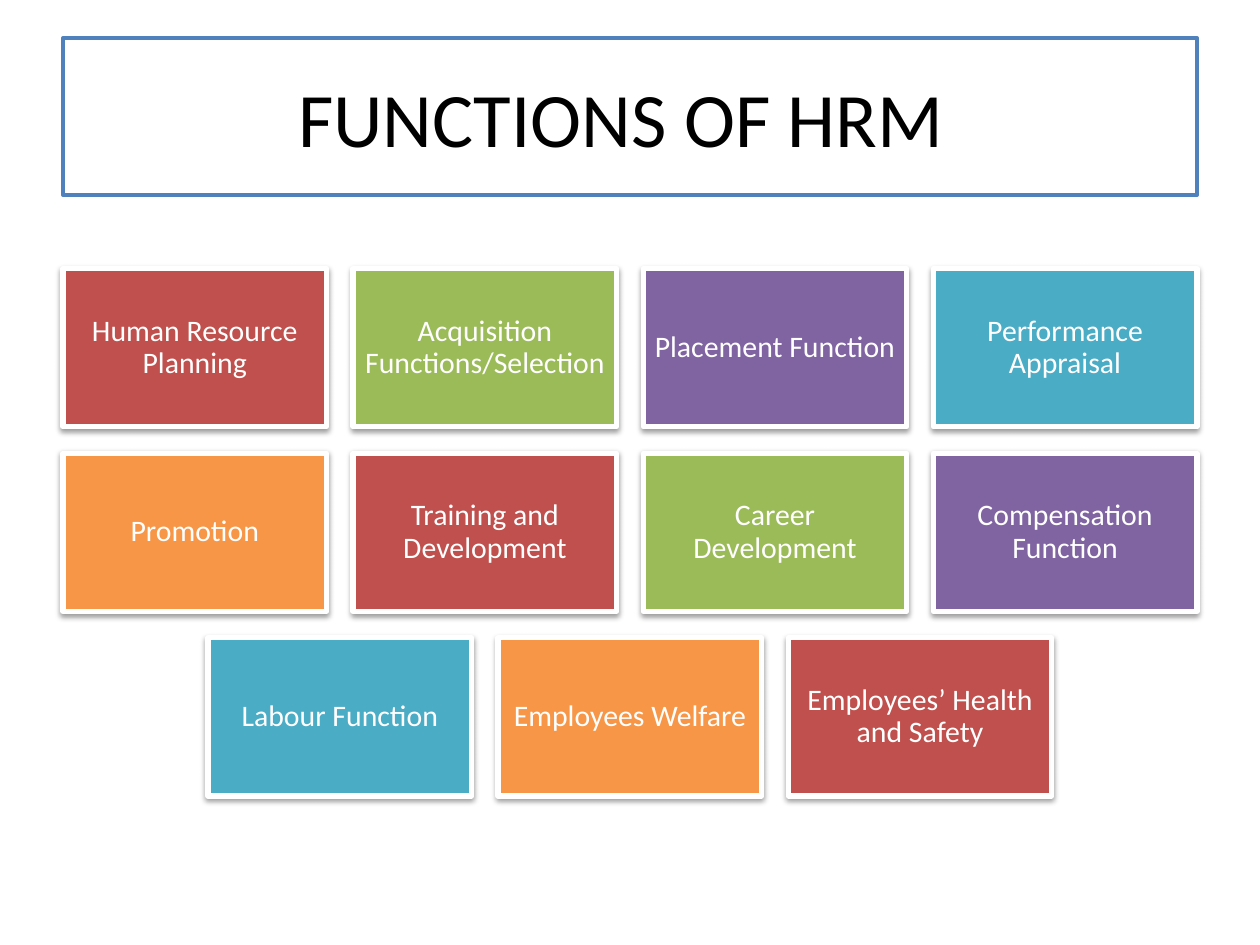
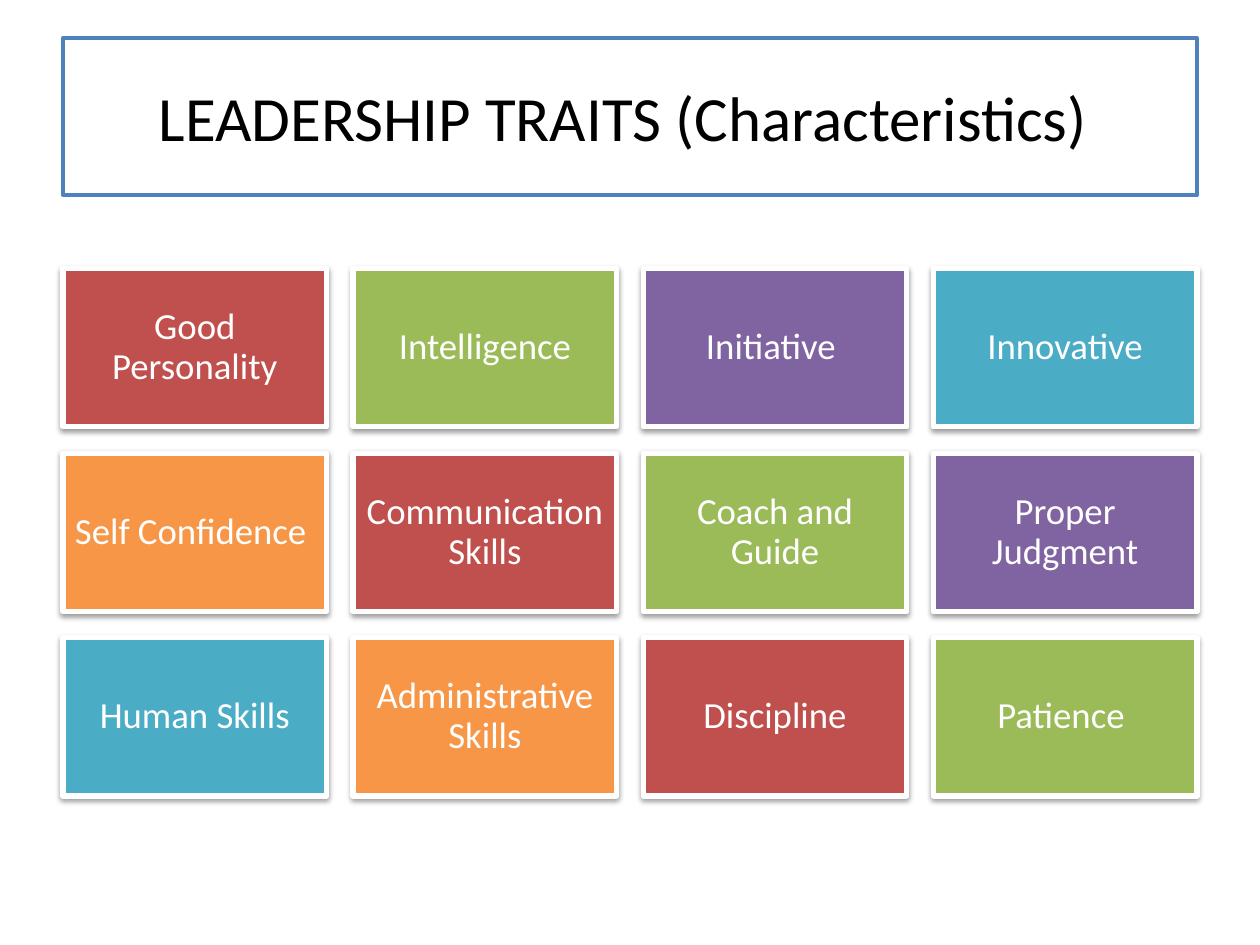
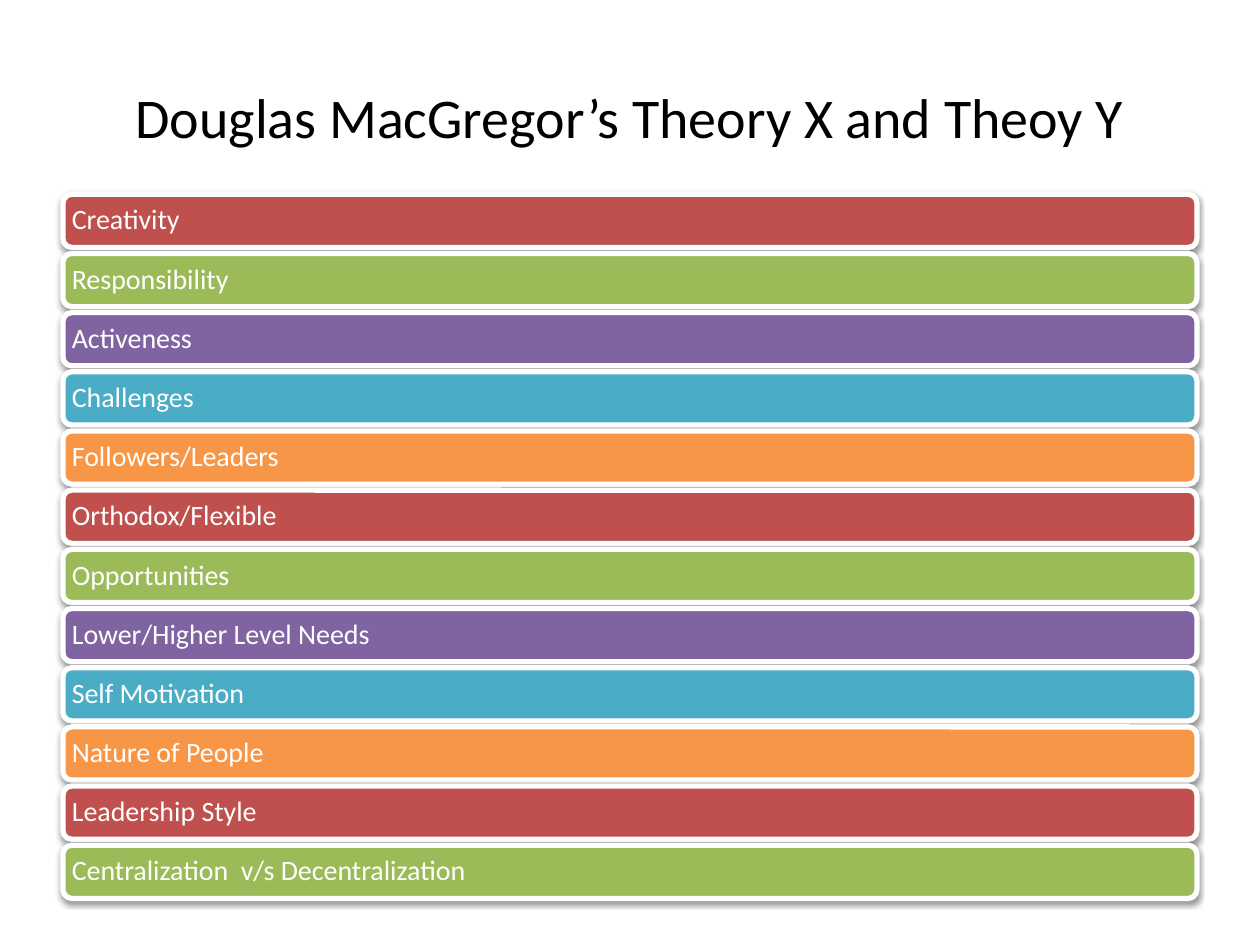
from dataclasses import dataclass

from lxml import etree
from pptx import Presentation
from pptx.dml.color import RGBColor
from pptx.enum.shapes import MSO_SHAPE
from pptx.enum.text import MSO_ANCHOR, MSO_AUTO_SIZE, PP_ALIGN
from pptx.oxml import parse_xml
from pptx.oxml.ns import qn
from pptx.util import Pt

RECTANGLE = MSO_SHAPE.RECTANGLE
ROUNDED = MSO_SHAPE.ROUNDED_RECTANGLE
MIDDLE = MSO_ANCHOR.MIDDLE
NO_AUTOFIT = MSO_AUTO_SIZE.NONE
LEFT, CENTER = PP_ALIGN.LEFT, PP_ALIGN.CENTER
TITLE_ONLY = 5


@dataclass(frozen=True)
class Theme:
    font: str = "Calibri"
    ink: str = "000000"
    paper: str = "FFFFFF"
    frame: str = "4F81BD"
    accents: tuple = ("C0504D", "9BBB59", "8064A2", "4BACC6", "F79646")
    large_title: int = 44
    medium_title: int = 36
    small_title: int = 32
    large_tile: int = 21
    small_tile: int = 17
    band: int = 16


@dataclass(frozen=True)
class Box:
    left: float
    top: float
    width: float
    height: float

    def lengths(self):
        return Pt(self.left), Pt(self.top), Pt(self.width), Pt(self.height)


THEME = Theme()
TITLE_BOX = Box(36, 21.6, 648, 90)
TILES_BOX = Box(36, 126, 648, 356.4)
BANDS_BOX = Box(36, 111, 648, 402.4)

HRM_FUNCTIONS = [
    "Human Resource Planning", "Acquisition Functions/Selection",
    "Placement Function", "Performance Appraisal",
    "Promotion", "Training and Development",
    "Career Development", "Compensation Function",
    "Labour Function", "Employees Welfare", "Employees’ Health and Safety",
]
LEADERSHIP_TRAITS = [
    "Good Personality", "Intelligence", "Initiative ", "Innovative",
    "Self Confidence ", "Communication Skills", "Coach and Guide", "Proper Judgment",
    "Human Skills", "Administrative Skills", "Discipline", "Patience ",
]
THEORY_TOPICS = [
    "Creativity", "Responsibility", "Activeness", "Challenges",
    "Followers/Leaders", "Orthodox/Flexible", "Opportunities",
    "Lower/Higher Level Needs", "Self Motivation", "Nature of People",
    "Leadership Style", "Centralization  v/s Decentralization",
]


def color(value):
    return RGBColor.from_string(value)


def paint(shape, fill, line, weight):
    shape.fill.solid()
    shape.fill.fore_color.rgb = color(fill)
    shape.line.color.rgb = color(line)
    shape.line.width = Pt(weight)


def write(shape, text, size, ink, align):
    frame = shape.text_frame
    frame.text = text
    frame.word_wrap = True
    frame.auto_size = NO_AUTOFIT
    frame.vertical_anchor = MIDDLE
    para = frame.paragraphs[0]
    para.alignment = align
    para.font.name = THEME.font
    para.font.size = Pt(size)
    para.font.color.rgb = color(ink)
    return para


def add_shadow(shape):
    shape.shadow.inherit = False
    effects = shape._element.spPr.find(qn("a:effectLst"))
    shadow = etree.SubElement(
        effects, qn("a:outerShdw"), blurRad=str(Pt(3.1)), dist=str(Pt(1.6)),
        dir="5400000", rotWithShape="0")
    tint = etree.SubElement(shadow, qn("a:srgbClr"), val=THEME.ink)
    etree.SubElement(tint, qn("a:alpha"), val="38000")


def add_card(page, kind, box, order, text, size, align, inset):
    card = page.shapes.add_shape(kind, *box.lengths())
    paint(card, THEME.accents[order % len(THEME.accents)], THEME.paper, 3)
    add_shadow(card)
    write(card, text, size, THEME.paper, align).line_spacing = 0.9
    frame = card.text_frame
    frame.margin_left = frame.margin_right = Pt(inset)
    frame.margin_top = frame.margin_bottom = Pt(inset)


def add_page(deck, text, size, framed):
    page = deck.slides.add_slide(deck.slide_layouts[TITLE_ONLY])
    title = page.shapes.title
    title.left, title.top, title.width, title.height = TITLE_BOX.lengths()
    if framed:
        paint(title, THEME.paper, THEME.frame, 2)
    write(title, text, size, THEME.ink, CENTER)
    return page


def add_tiles(page, box, labels, size, inset, columns=4):
    width = box.width / (columns + (columns - 1) * 0.1)
    height, gap = width * 0.6, width * 0.1
    rows = [labels[start:start + columns] for start in range(0, len(labels), columns)]
    top = box.top + (box.height - len(rows) * (height + gap) + gap) / 2
    for row, names in enumerate(rows):
        left = box.left + (box.width - len(names) * (width + gap) + gap) / 2
        for column, name in enumerate(names):
            tile = Box(left + column * (width + gap), top + row * (height + gap), width, height)
            add_card(page, RECTANGLE, tile, row * columns + column, name, size, CENTER, inset)


def add_bands(page, box, labels, gap=3.4):
    height = (box.height + gap) / len(labels) - gap
    for order, label in enumerate(labels):
        band = Box(box.left, box.top + order * (height + gap), box.width, height)
        add_card(page, ROUNDED, band, order, label, THEME.band, LEFT, 3.6)


def main():
    deck = Presentation()
    deck.slide_width, deck.slide_height = Pt(720), Pt(540)

    functions = add_page(deck, "FUNCTIONS OF HRM ", THEME.large_title, True)
    add_tiles(functions, TILES_BOX, HRM_FUNCTIONS, THEME.small_tile, 5)

    traits = add_page(deck, "LEADERSHIP TRAITS (Characteristics) ", THEME.medium_title, True)
    add_tiles(traits, TILES_BOX, LEADERSHIP_TRAITS, THEME.large_tile, 6.3)

    theory = add_page(deck, "Douglas MacGregor’s Theory X and Theoy Y", THEME.small_title, False)
    add_bands(theory, BANDS_BOX, THEORY_TOPICS)

    deck.save("out.pptx")


if __name__ == "__main__":
    main()
